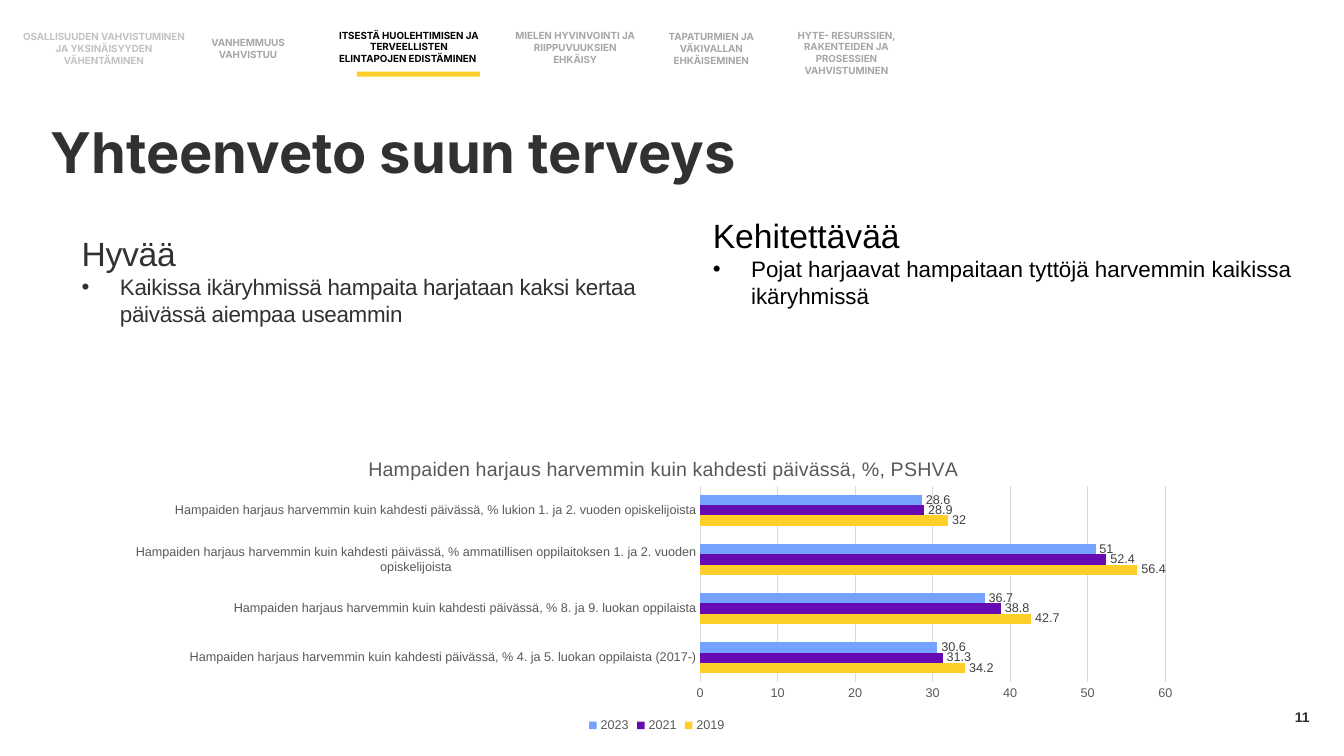
from lxml.etree import SubElement
from pptx import Presentation
from pptx.chart.data import CategoryChartData
from pptx.dml.color import RGBColor
from pptx.enum.chart import XL_CHART_TYPE, XL_LABEL_POSITION, XL_LEGEND_POSITION, XL_TICK_MARK
from pptx.enum.shapes import MSO_SHAPE
from pptx.enum.text import MSO_ANCHOR, MSO_AUTO_SIZE, PP_ALIGN
from pptx.oxml.ns import qn
from pptx.util import Pt

EMU_PER_PX = 9144
BLACK = RGBColor(0x00, 0x00, 0x00)
DARK = RGBColor(0x31, 0x31, 0x31)
LABEL_GREY = RGBColor(0x40, 0x40, 0x40)
AXIS_GREY = RGBColor(0x59, 0x59, 0x59)
NAV_GREY = RGBColor(0xA6, 0xA6, 0xA6)
PALE_GREY = RGBColor(0xC2, 0xC2, 0xC2)
GRID_GREY = RGBColor(0xD9, 0xD9, 0xD9)
YELLOW = RGBColor(0xFF, 0xCF, 0x29)
PURPLE = RGBColor(0x66, 0x0A, 0xB2)
BLUE = RGBColor(0x75, 0xA1, 0xFF)

TITLE_FONT = {"name": "Inter", "size": Pt(40), "bold": True}
NAV_FONT = {"name": "Inter", "size": Pt(7), "bold": True}
NUMBER_FONT = {"name": "Arial", "size": Pt(10), "bold": True}
HEADING_FONT = {"name": "Arial", "size": Pt(24)}
BULLET_FONT = {"name": "Arial", "size": Pt(16)}
CHART_FONT = {"name": "Arial", "size": Pt(10)}
CHART_TITLE_FONT = {"name": "Arial", "size": Pt(14), "bold": False}
CHART_SMALL_FONT = {"name": "Arial", "size": Pt(9)}
NO_MARGINS = {"margin_left": 0, "margin_top": 0, "margin_right": 0, "margin_bottom": 0}

NAV_ITEMS = [
    ((22, 36, 162, 24), "OSALLISUUDEN VAHVISTUMINEN JA YKSINÄISYYDEN VÄHENTÄMINEN", PALE_GREY),
    ((185, 42, 122, 12), "VANHEMMUUS VAHVISTUU", NAV_GREY),
    ((335, 29, 141, 35), "ITSESTÄ HUOLEHTIMISEN JA TERVEELLISTEN ELINTAPOJEN EDISTÄMINEN ", BLACK),
    ((507, 35, 127, 24), "MIELEN HYVINVOINTI JA RIIPPUVUUKSIEN EHKÄISY", NAV_GREY),
    ((642, 36, 127, 24), "TAPATURMIEN JA VÄKIVALLAN EHKÄISEMINEN", NAV_GREY),
    ((769, 35, 141, 35), "HYTE- RESURSSIEN, RAKENTEIDEN JA PROSESSIEN\nVAHVISTUMINEN", NAV_GREY),
]

CHART_HEADING = "Hampaiden harjaus harvemmin kuin kahdesti päivässä, %"
PUPIL_GROUPS = [
    "4. ja 5. luokan oppilaista (2017-)",
    "8. ja 9. luokan oppilaista",
    "ammatillisen oppilaitoksen 1. ja 2. vuoden opiskelijoista",
    "lukion 1. ja 2. vuoden opiskelijoista",
]
YEARS = [
    ("2019", (34.2, 42.7, 56.4, 32), YELLOW),
    ("2021", (31.3, 38.8, 52.4, 28.9), PURPLE),
    ("2023", (30.6, 36.7, 51, 28.6), BLUE),
]


def px(*lengths):
    """Turn px lengths into EMU."""
    return [length * EMU_PER_PX for length in lengths]


def assign(target, values):
    """Set each named attribute on the target."""
    for name, value in values.items():
        setattr(target, name, value)


def set_font(font, values, color):
    """Format a font and give it a colour."""
    assign(font, values)
    font.color.rgb = color


def place(placeholder, box):
    """Move a placeholder and make its frame plain."""
    assign(placeholder, dict(zip(("left", "top", "width", "height"), px(*box))))
    assign(placeholder.text_frame, {
        **NO_MARGINS, "word_wrap": True, "auto_size": MSO_AUTO_SIZE.NONE,
        "vertical_anchor": MSO_ANCHOR.TOP,
    })


def fill_title(title):
    """Write the slide title."""
    place(title, (50, 121, 1233, 85))
    heading = title.text_frame.paragraphs[0]
    assign(heading, {"alignment": PP_ALIGN.LEFT, "line_spacing": 0.95})
    run = heading.add_run()
    run.text = "Yhteenveto suun terveys"
    set_font(run.font, TITLE_FONT, DARK)


def fill_summary(body, box, heading, finding, color, tracking=0):
    """Write a heading with one bulleted finding."""
    place(body, box)
    frame = body.text_frame
    frame.text = f"{heading}\n{finding}"
    formats = [(HEADING_FONT, 0, None), (BULLET_FONT, 38, "•")]
    for paragraph, (font, indent, bullet) in zip(frame.paragraphs, formats):
        properties = paragraph._p.get_or_add_pPr()
        properties.set("marL", str(*px(indent)))
        properties.set("indent", str(*px(-indent)))
        if bullet:
            SubElement(properties, qn("a:buFont")).set("typeface", "Arial")
            SubElement(properties, qn("a:buChar")).set("char", bullet)
        else:
            SubElement(properties, qn("a:buNone"))
        paragraph.space_before = Pt(0)
        run = paragraph.runs[0]
        set_font(run.font, font, color)
        if tracking:
            run.font._element.set("spc", str(tracking))


def add_label(slide, box, text, font, color, alignment, auto_size):
    """Add a small text box centred on its height."""
    frame = slide.shapes.add_textbox(*px(*box)).text_frame
    assign(frame, {
        **NO_MARGINS, "text": text, "word_wrap": True, "auto_size": auto_size,
        "vertical_anchor": MSO_ANCHOR.MIDDLE,
    })
    for paragraph in frame.paragraphs:
        paragraph.alignment = alignment
        set_font(paragraph.runs[0].font, font, color)


def add_marker(slide, box):
    """Underline the current section."""
    marker = slide.shapes.add_shape(MSO_SHAPE.RECTANGLE, *px(*box))
    marker.shadow.inherit = False
    marker.fill.solid()
    marker.fill.fore_color.rgb = YELLOW
    marker.line.fill.background()


def set_layout(part, index, fractions, inner=False):
    """Fix the place of a chart part as fractions of the chart."""
    for layout in part.findall(qn("c:layout")):
        part.remove(layout)
    layout = SubElement(part, qn("c:layout"))
    part.insert(index, layout)
    manual = SubElement(layout, qn("c:manualLayout"))
    if inner:
        SubElement(manual, qn("c:layoutTarget")).set("val", "inner")
    for side in ("xMode", "yMode"):
        SubElement(manual, qn(f"c:{side}")).set("val", "edge")
    for side, fraction in zip("xywh", fractions):
        SubElement(manual, qn(f"c:{side}")).set("val", str(fraction))


def format_axes(chart):
    """Style the category and value axes."""
    categories, values = chart.category_axis, chart.value_axis
    for axis in (categories, values):
        assign(axis, {"major_tick_mark": XL_TICK_MARK.NONE, "minor_tick_mark": XL_TICK_MARK.NONE})
        set_font(axis.tick_labels.font, CHART_SMALL_FONT, AXIS_GREY)
    assign(values, {"minimum_scale": 0, "maximum_scale": 60, "major_unit": 10})
    values.format.line.fill.background()
    for line in (categories.format.line, values.major_gridlines.format.line):
        line.color.rgb = GRID_GREY
        line.width = Pt(0.75)


def add_brushing_chart(slide, box):
    """Add the bar chart of tooth brushing by pupil group."""
    brushing = CategoryChartData()
    brushing.categories = [f"{CHART_HEADING} {group}" for group in PUPIL_GROUPS]
    for year, shares, _ in YEARS:
        brushing.add_series(year, shares)
    chart = slide.shapes.add_chart(XL_CHART_TYPE.BAR_CLUSTERED, *px(*box), brushing).chart
    set_font(chart.font, CHART_FONT, BLACK)
    chart.has_title = True
    heading = chart.chart_title.text_frame
    heading.text = f"{CHART_HEADING}, PSHVA"
    set_font(heading.paragraphs[0].runs[0].font, CHART_TITLE_FONT, AXIS_GREY)
    set_layout(chart.chart_title._element, 1, (0.23, 0.06))
    set_layout(chart._chartSpace.chart.plotArea, 0, (0.54, 0.17, 0.43, 0.65), inner=True)
    chart.has_legend = True
    assign(chart.legend, {"position": XL_LEGEND_POSITION.BOTTOM, "include_in_layout": False})
    set_font(chart.legend.font, CHART_SMALL_FONT, AXIS_GREY)
    format_axes(chart)
    assign(chart.plots[0], {"gap_width": 182, "overlap": 0, "vary_by_categories": False})
    for series, (_, _, color) in zip(chart.plots[0].series, YEARS):
        series.format.fill.solid()
        series.format.fill.fore_color.rgb = color
        labels = series.data_labels
        assign(labels, {"show_value": True, "position": XL_LABEL_POSITION.OUTSIDE_END})
        set_font(labels.font, CHART_SMALL_FONT, LABEL_GREY)


def main():
    """Build the slide and save it."""
    deck = Presentation()
    deck.slide_width, deck.slide_height = px(1333, 750)
    slide = deck.slides.add_slide(deck.slide_layouts[3])
    title, strengths, needs = slide.placeholders
    fill_title(title)
    fill_summary(strengths, (81, 231, 561, 442), "Hyvää",
                 "Kaikissa ikäryhmissä hampaita harjataan kaksi kertaa päivässä aiempaa useammin",
                 DARK, tracking=-20)
    fill_summary(needs, (707, 213, 584, 442), "Kehitettävää",
                 "Pojat harjaavat hampaitaan tyttöjä harvemmin kaikissa ikäryhmissä", BLACK)
    for box, section, color in NAV_ITEMS:
        add_label(slide, box, section, NAV_FONT, color, PP_ALIGN.CENTER,
                  MSO_AUTO_SIZE.SHAPE_TO_FIT_TEXT)
    add_marker(slide, (354, 71, 122, 5))
    add_label(slide, (999, 691, 300, 40), "11", NUMBER_FONT, DARK, PP_ALIGN.RIGHT,
              MSO_AUTO_SIZE.NONE)
    add_brushing_chart(slide, (115, 431, 1073, 300))
    deck.save("out.pptx")


if __name__ == "__main__":
    main()
